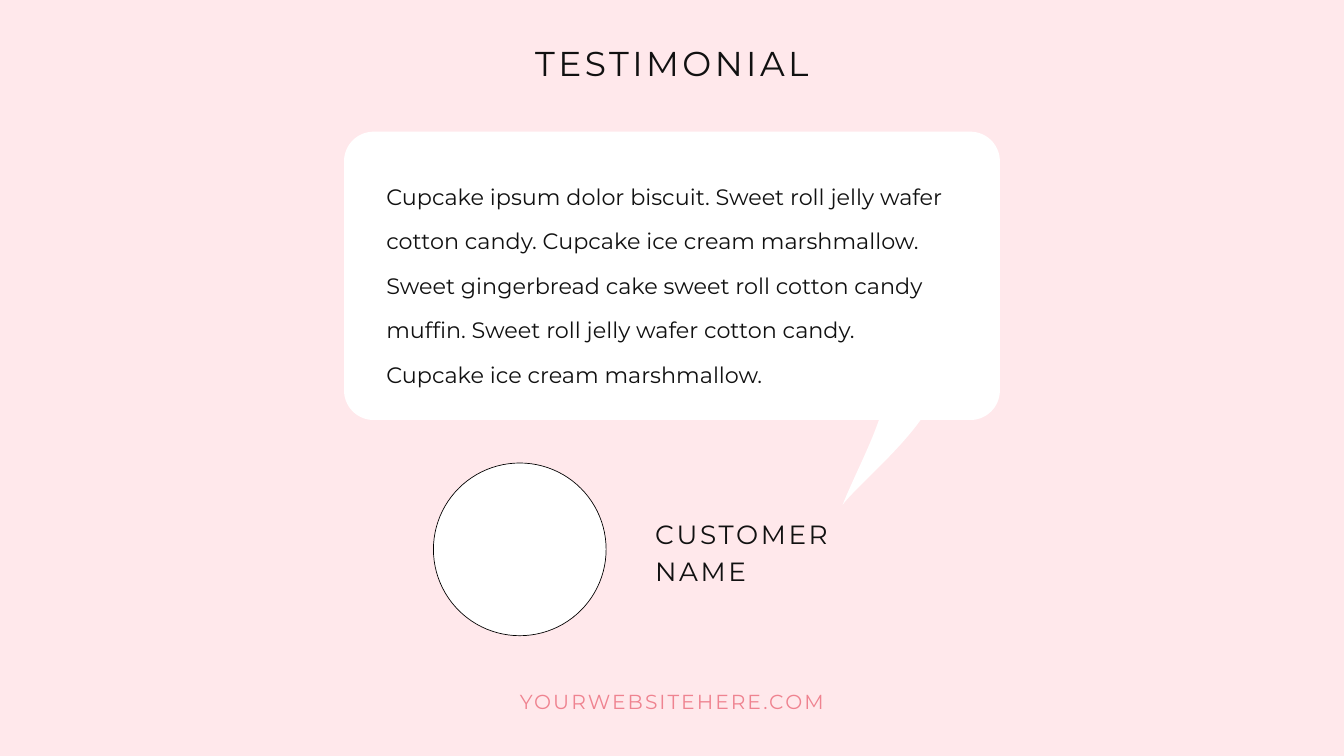
import math
from pptx import Presentation
from pptx import util as u
from pptx.dml.color import RGBColor
from pptx.enum import shapes, text

FONT = "Montserrat"
COLORS = {"background": "FFE8EB", "white": "FFFFFF", "ink": "111111",
          "outline": "000000", "accent": "EF8390"}
LEFT, CENTER = text.PP_ALIGN.LEFT, text.PP_ALIGN.CENTER

TITLE = dict(words="TESTIMONIAL", box=(6.45, 0.74, 7.1, 0.53), size=36.9,
             leading=36.1, tracking=3.68, align=CENTER)
TEXTS = [
    dict(words="Cupcake ipsum dolor biscuit. Sweet roll jelly wafer cotton candy. "
               "Cupcake ice cream marshmallow. Sweet gingerbread cake sweet roll "
               "cotton candy muffin. Sweet roll jelly wafer cotton candy. "
               "Cupcake ice cream marshmallow.",
         box=(5.75, 2.46, 8.5, 3.19), size=23.9, leading=47.7),
    dict(words="CUSTOMER NAME", box=(9.75, 7.63, 3.82, 1.07), size=28.2,
         leading=39.5, tracking=2.82),
    dict(words="YOURWEBSITEHERE.COM", box=(6.13, 10.31, 7.74, 0.31), size=21.7,
         leading=21.7, tracking=2.16, align=CENTER, color="accent"),
]
BUBBLE = dict(left=5.12, top=1.96, right=14.88, bottom=6.25, radius=0.44)
# Each side of the tail is a cubic Bezier curve
TAIL = [[(13.7, 6.25), (13.35, 6.74), (12.73, 7.26), (12.54, 7.51)],
        [(12.54, 7.51), (12.71, 7.09), (12.93, 6.68), (13.08, 6.25)]]
PORTRAIT = (6.45, 6.89, 2.57, 2.57)


def rgb(name):
    return RGBColor.from_string(COLORS[name])


def inches(values):
    return [u.Inches(v) for v in values]


def write(sp, words, box, size, leading, tracking=0, align=LEFT, color="ink"):
    sp.left, sp.top, sp.width, sp.height = inches(box)
    tf = sp.text_frame
    tf.margin_left = tf.margin_top = tf.margin_right = tf.margin_bottom = 0
    tf.word_wrap = True
    tf.auto_size = text.MSO_AUTO_SIZE.NONE
    tf.vertical_anchor = text.MSO_ANCHOR.TOP
    p = tf.paragraphs[0]
    p.alignment = align
    p.line_spacing = u.Pt(leading)
    r = p.add_run()
    r.text = words
    r.font.name, r.font.size = FONT, u.Pt(size)
    r.font.color.rgb = rgb(color)
    if tracking:
        r.font._element.set("spc", str(round(tracking * 100)))


def bezier(points, steps=16):
    for i in range(steps + 1):
        t = i / steps
        yield tuple(sum(math.comb(3, k) * (1 - t) ** (3 - k) * t ** k * pt[axis]
                        for k, pt in enumerate(points)) for axis in (0, 1))


def bubble_outline(left, top, right, bottom, radius, steps=24):
    """Points clockwise from the top left corner, with the tail on the bottom edge."""
    xs, ys = (left + radius, right - radius), (top + radius, bottom - radius)
    centers = [(xs[0], ys[0]), (xs[1], ys[0]), (xs[1], ys[1]), (xs[0], ys[1])]
    points = []
    for corner, (cx, cy) in enumerate(centers):
        if corner == 3:
            for side in TAIL:
                points += bezier(side)
        for i in range(steps + 1):
            angle = math.pi + math.pi / 2 * (corner + i / steps)
            points.append((cx + radius * math.cos(angle), cy + radius * math.sin(angle)))
    return points


prs = Presentation()
prs.slide_width, prs.slide_height = inches((20, 11.25))
s = prs.slides.add_slide(prs.slide_layouts[5])
s.background.fill.solid()
s.background.fill.fore_color.rgb = rgb("background")

start, *rest = [inches(point) for point in bubble_outline(**BUBBLE)]
builder = s.shapes.build_freeform(*start)
builder.add_line_segments(rest, close=True)
bubble = builder.convert_to_shape()
bubble.line.fill.background()

portrait = s.shapes.add_shape(shapes.MSO_SHAPE.OVAL, *inches(PORTRAIT))
portrait.line.color.rgb = rgb("outline")
portrait.line.width = u.Pt(0.75)

for sp in (bubble, portrait):
    sp.shadow.inherit = False
    sp.fill.solid()
    sp.fill.fore_color.rgb = rgb("white")

write(s.shapes.title, **TITLE)
for item in TEXTS:
    write(s.shapes.add_textbox(0, 0, 0, 0), **item)

prs.save("out.pptx")
